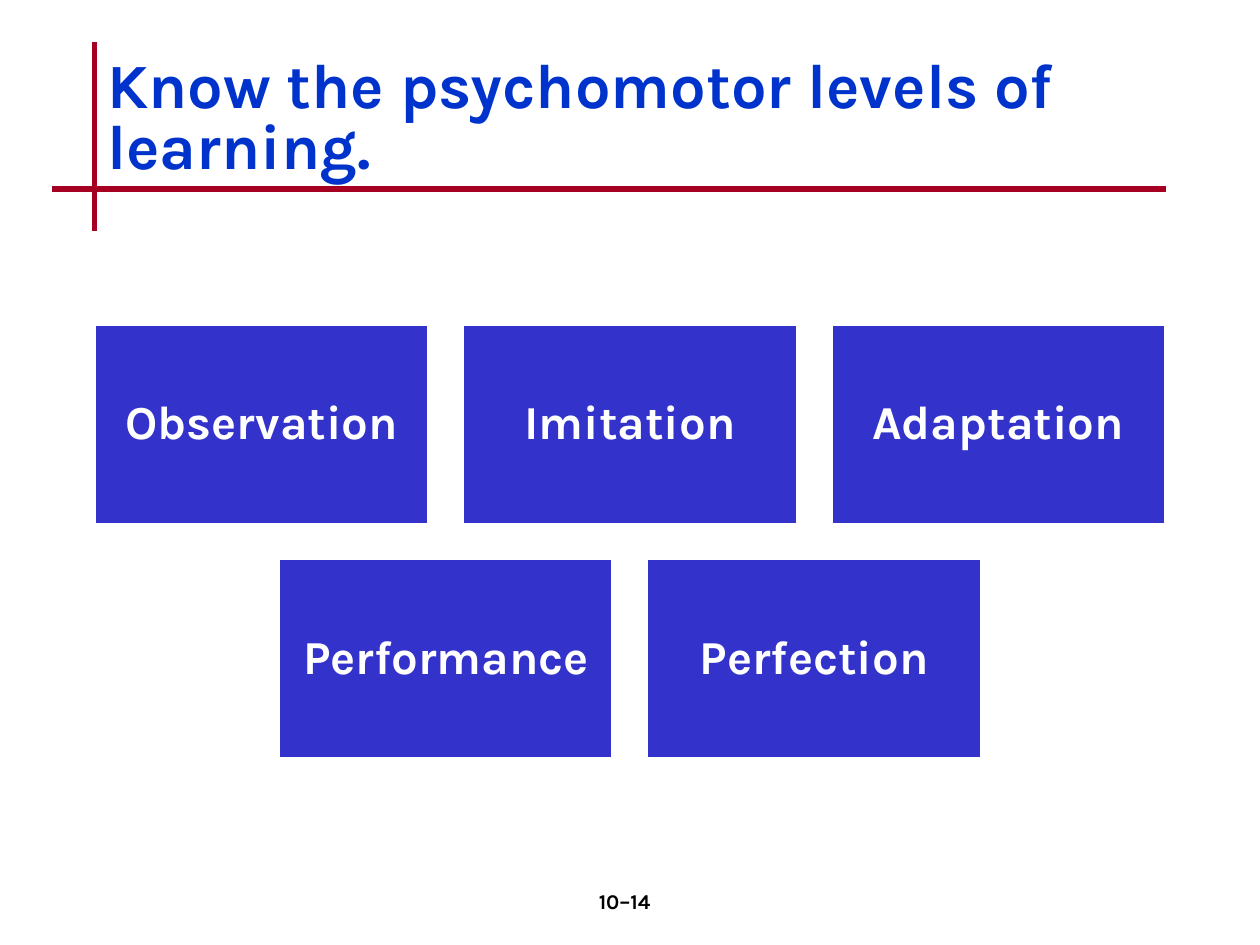
from lxml.etree import SubElement
from pptx import Presentation
from pptx.dml.color import RGBColor as RGB
from pptx.enum.shapes import MSO_CONNECTOR as Conn, MSO_SHAPE as Shape
from pptx.enum.text import MSO_ANCHOR as Anchor, MSO_AUTO_SIZE as Fit, PP_ALIGN as Align
from pptx.oxml.ns import qn
from pptx.util import Pt

HEX = {"rule": "A50021", "box": "3333CC", "white": "FFFFFF",
       "title": "0033CC", "black": "000000"}
RGBS = {name: RGB.from_string(code) for name, code in HEX.items()}


def style(para, size, color, align):
    para.alignment = align
    font = para.font
    font.name, font.size, font.bold = "Karla", Pt(size), True
    font.color.rgb = RGBS[color]


deck = Presentation()
deck.slide_width, deck.slide_height = Pt(720), Pt(540)
slide = deck.slides.add_slide(deck.slide_layouts[5])
shapes = slide.shapes

# Crossed rules beside and below the title
for x1, y1, x2, y2 in [(54, 24, 54, 132), (30, 108, 666, 108)]:
    rule = shapes.add_connector(Conn.STRAIGHT, Pt(x1), Pt(y1), Pt(x2), Pt(y2))
    rule.line.color.rgb = RGBS["rule"]
    rule.line.width = Pt(3)
    SubElement(rule._element.spPr, qn("a:effectLst"))

title = shapes.title
title.left, title.top, title.width, title.height = Pt(54), Pt(24), Pt(612), Pt(90)
frame = title.text_frame
frame.text = "Know the psychomotor levels of learning."
frame.vertical_anchor = Anchor.MIDDLE
frame.auto_size = Fit.NONE
para = frame.paragraphs[0]
para.line_spacing = 0.8
style(para, 36, "title", Align.LEFT)

# Rows of level boxes, each centred on the slide
rows = [["Observation", "Imitation", "Adaptation"], ["Performance", "Perfection"]]
wide, high, gap, top = 191.25, 114.75, 19.12, 185.25
for row, names in enumerate(rows):
    left = (720 - len(names) * wide - (len(names) - 1) * gap) / 2
    for col, name in enumerate(names):
        box = shapes.add_shape(Shape.RECTANGLE, Pt(left + col * (wide + gap)),
                               Pt(top + row * (high + gap)), Pt(wide), Pt(high))
        box.shadow.inherit = False
        box.fill.solid()
        box.fill.fore_color.rgb = RGBS["box"]
        box.line.color.rgb = RGBS["white"]
        box.line.width = Pt(2)
        frame = box.text_frame
        frame.text = name
        frame.word_wrap = True
        frame.vertical_anchor = Anchor.MIDDLE
        frame.margin_left = frame.margin_right = Pt(8)
        frame.margin_top = frame.margin_bottom = Pt(8)
        para = frame.paragraphs[0]
        para.line_spacing = 0.9
        style(para, 27, "white", Align.CENTER)

page = shapes.add_textbox(Pt(282), Pt(504), Pt(150), Pt(36))
page.text_frame.word_wrap = True
page.text_frame.text = "10–14"
style(page.text_frame.paragraphs[0], 12, "black", Align.CENTER)

deck.save("out.pptx")
